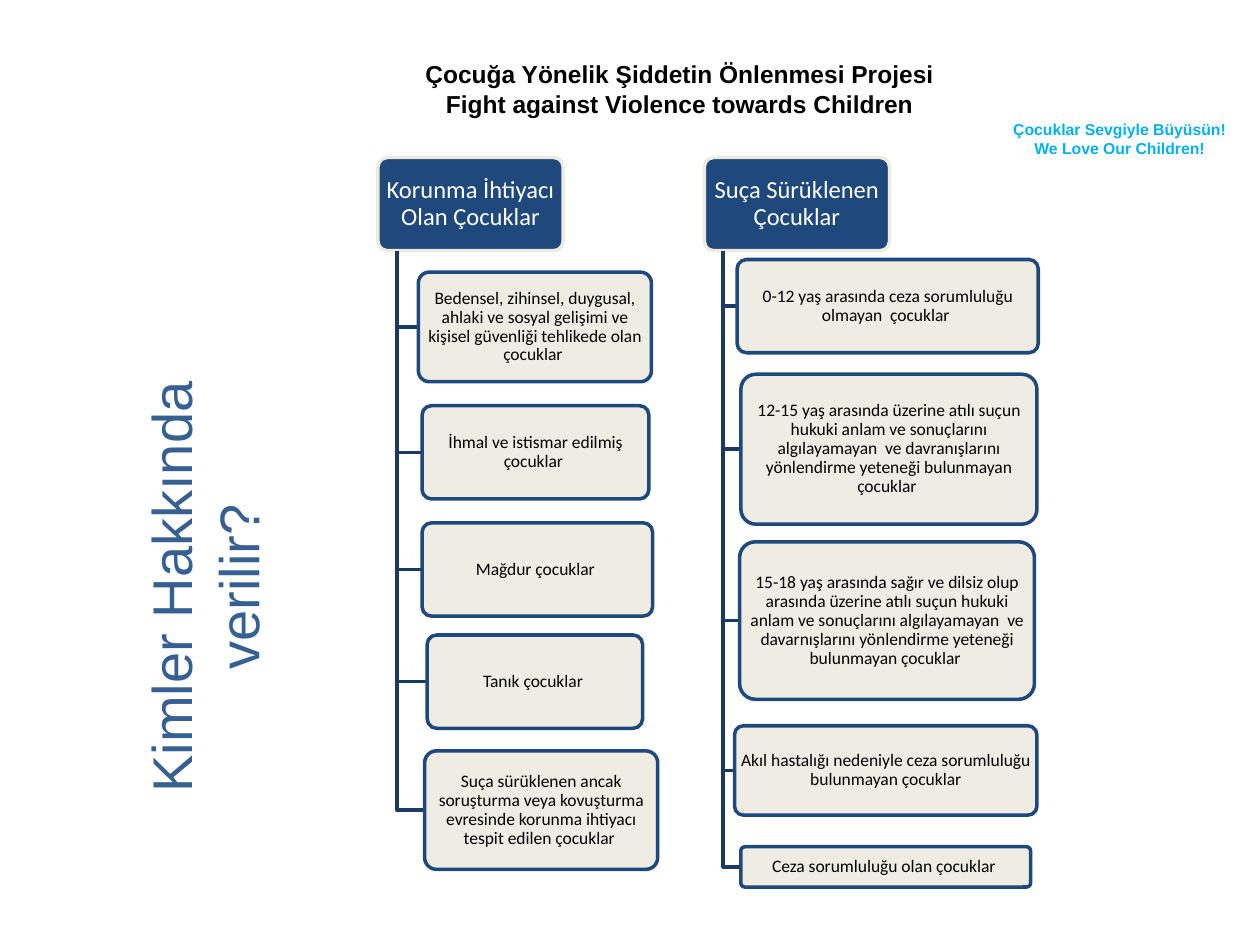
from dataclasses import dataclass

from lxml.etree import SubElement
from pptx import Presentation
from pptx.dml.color import RGBColor
from pptx.enum.shapes import MSO_SHAPE
from pptx.enum.text import MSO_ANCHOR, MSO_AUTO_SIZE, PP_ALIGN
from pptx.oxml.ns import qn
from pptx.util import Emu, Inches, Pt

COLORS = {
    "navy": "1F497D",
    "trunk": "193A64",
    "cream": "EEECE1",
    "title": "376092",
    "slogan": "00B0F0",
    "black": "000000",
    "white": "FFFFFF",
}
SLIDE_WIDTH, SLIDE_HEIGHT = Inches(10), Inches(7.5)
CELL = SLIDE_WIDTH // 10  # square grid: 10 columns by 7.5 rows
HEADER_TOP, HEADER_WIDTH, HEADER_HEIGHT = 1.25, 1.47, 0.74
TRUNK_INDENT = 0.15
CARD_HEIGHT = 0.74


@dataclass(frozen=True)
class Card:
    text: str
    indent: float
    top: float
    width: float
    height: float = CARD_HEIGHT


@dataclass(frozen=True)
class Branch:
    heading: str
    left: float
    cards: tuple[Card, ...]


@dataclass(frozen=True)
class Banner:
    lines: tuple[str, ...]
    area: tuple[float, float, float, float]
    size: int
    color: str


BANNERS = (
    Banner(("Çocuğa Yönelik Şiddetin Önlenmesi Projesi",
            "Fight against Violence towards Children"),
           (3.27, 0.42, 4.25, 0.57), 14, "black"),
    Banner(("Çocuklar Sevgiyle Büyüsün!", "We Love Our Children!"),
           (7.93, 0.9, 1.91, 0.4), 9, "slogan"),
)

BRANCHES = (
    Branch("Korunma İhtiyacı Olan Çocuklar", 3, (
        Card("Bedensel, zihinsel, duygusal, ahlaki ve sosyal gelişimi ve "
             "kişisel güvenliği tehlikede olan çocuklar ", 0.32, 2.16, 1.85, 0.87),
        Card("İhmal ve istismar edilmiş çocuklar ", 0.35, 3.22, 1.8),
        Card("Mağdur çocuklar ", 0.35, 4.15, 1.83),
        Card("Tanık çocuklar ", 0.39, 5.04, 1.71),
        Card("Suça sürüklenen ancak soruşturma veya kovuşturma evresinde "
             "korunma ihtiyacı tespit edilen çocuklar ", 0.37, 5.96, 1.85, 0.94),
    )),
    Branch("Suça Sürüklenen Çocuklar", 5.59, (
        Card("0-12 yaş arasında ceza sorumluluğu olmayan  çocuklar ", 0.26, 2.06, 2.39),
        Card("12-15 yaş arasında üzerine atılı suçun hukuki anlam ve sonuçlarını "
             "algılayamayan  ve davranışlarını yönlendirme yeteneği bulunmayan "
             "çocuklar ", 0.29, 2.97, 2.35, 1.19),
        Card("15-18 yaş arasında sağır ve dilsiz olup arasında üzerine atılı suçun "
             "hukuki anlam ve sonuçlarını algılayamayan  ve davarnışlarını "
             "yönlendirme yeteneği bulunmayan çocuklar ", 0.28, 4.3, 2.34, 1.25),
        Card("Akıl hastalığı nedeniyle ceza sorumluluğu bulunmayan çocuklar",
             0.24, 5.76, 2.4, 0.71),
        Card("Ceza sorumluluğu olan çocuklar ", 0.29, 6.72, 2.3, 0.32),
    )),
)


def cells(*counts: float) -> list[Emu]:
    return [Emu(round(count * CELL)) for count in counts]


def rgb(name: str) -> RGBColor:
    return RGBColor.from_string(COLORS[name])


def style_paragraph(paragraph, font_name: str, size: int, color: str,
                    bold: bool = False) -> None:
    paragraph.alignment = PP_ALIGN.CENTER
    font = paragraph.font
    font.name, font.size, font.bold = font_name, Pt(size), bold
    font.color.rgb = rgb(color)


def add_banner(slide, banner: Banner) -> None:
    frame = slide.shapes.add_textbox(*cells(*banner.area)).text_frame
    frame.word_wrap = False
    frame.auto_size = MSO_AUTO_SIZE.SHAPE_TO_FIT_TEXT
    frame.text = "\n".join(banner.lines)
    for paragraph in frame.paragraphs:
        style_paragraph(paragraph, "Arial", banner.size, banner.color, bold=True)


def set_side_title(slide, text: str) -> None:
    title = slide.shapes.title
    title.left, title.top, title.width, title.height = cells(-0.63, 4.07, 4.5, 1.18)
    title.rotation = 270
    frame = title.text_frame
    frame.text = text
    frame.word_wrap = True
    frame.auto_size = MSO_AUTO_SIZE.NONE
    frame.vertical_anchor = MSO_ANCHOR.TOP
    style_paragraph(frame.paragraphs[0], "Arial", 32, "title")


def add_node(slide, text: str, area: tuple[float, float, float, float], fill: str,
             border: str, ink: str, size: int, inset: float):
    node = slide.shapes.add_shape(MSO_SHAPE.ROUNDED_RECTANGLE, *cells(*area))
    node.adjustments[0] = 0.1
    node.shadow.inherit = False
    node.fill.solid()
    node.fill.fore_color.rgb = rgb(fill)
    node.line.color.rgb = rgb(border)
    node.line.width = Pt(2)
    frame = node.text_frame
    frame.word_wrap = True
    frame.vertical_anchor = MSO_ANCHOR.MIDDLE
    frame.margin_left = frame.margin_right = Inches(inset)
    frame.margin_top = frame.margin_bottom = Inches(inset - 0.01)
    frame.text = text
    paragraph = frame.paragraphs[0]
    paragraph.line_spacing = 0.9
    style_paragraph(paragraph, "Calibri", size, ink)
    return node


def add_elbow(slide, x: float, top: float, end_x: float, bottom: float) -> None:
    builder = slide.shapes.build_freeform(*cells(x, top))
    builder.add_line_segments([cells(x, bottom), cells(end_x, bottom)], close=False)
    elbow = builder.convert_to_shape()
    elbow.shadow.inherit = False
    elbow.fill.background()
    elbow.line.color.rgb = rgb("trunk")
    elbow.line.width = Pt(2)


def add_branch(slide, branch: Branch) -> None:
    add_node(slide, branch.heading,
             (branch.left, HEADER_TOP, HEADER_WIDTH, HEADER_HEIGHT),
             "navy", "cream", "white", size=14, inset=0.03)
    for card in branch.cards:
        left = branch.left + card.indent
        add_elbow(slide, branch.left + TRUNK_INDENT, HEADER_TOP + HEADER_HEIGHT,
                  left, card.top + card.height / 2)
        node = add_node(slide, card.text, (left, card.top, card.width, card.height),
                        "cream", "navy", "black", size=10, inset=0.02)
        fill_color = node.fill._xPr.find(qn("a:solidFill"))[0]
        SubElement(fill_color, qn("a:alpha"), val="90000")


def main() -> None:
    presentation = Presentation()
    presentation.slide_width, presentation.slide_height = SLIDE_WIDTH, SLIDE_HEIGHT
    slide = presentation.slides.add_slide(presentation.slide_layouts[5])
    for banner in BANNERS:
        add_banner(slide, banner)
    set_side_title(slide, "Kimler Hakkında verilir?")
    for branch in BRANCHES:
        add_branch(slide, branch)
    presentation.save("out.pptx")


if __name__ == "__main__":
    main()
